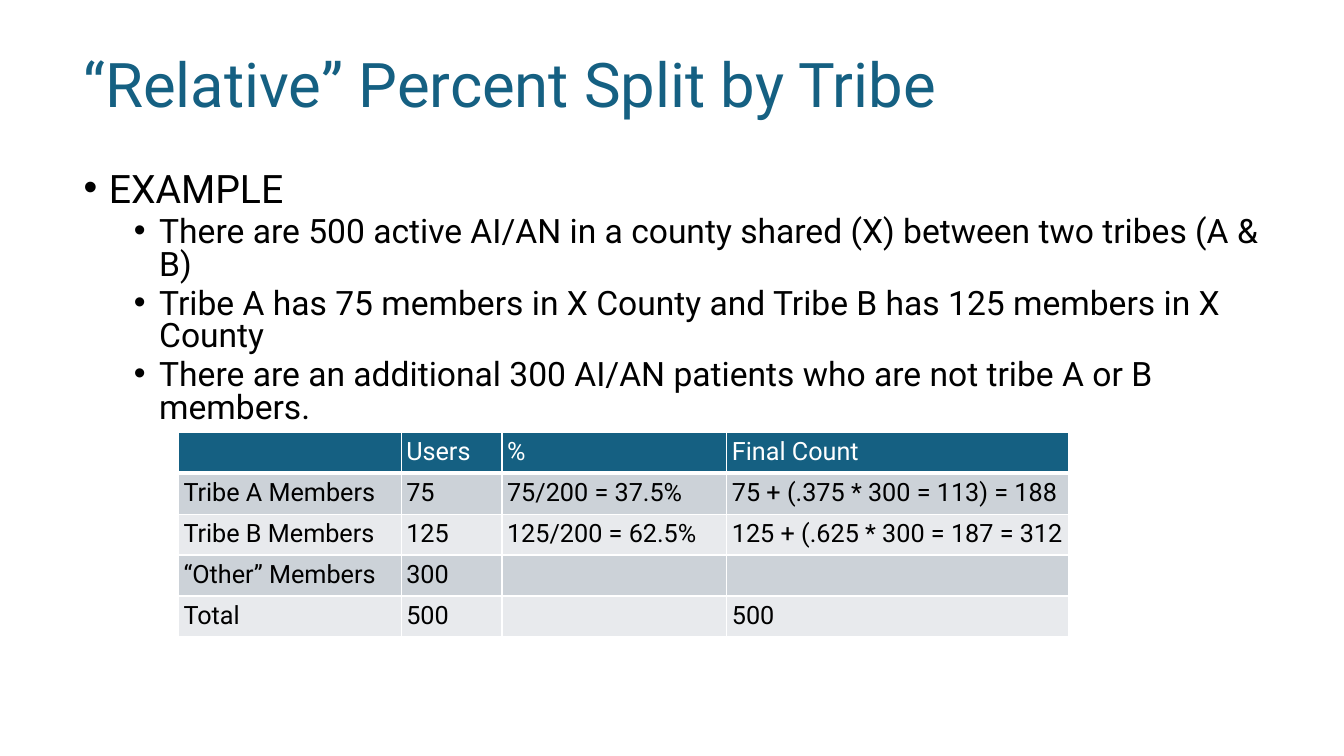
from lxml.etree import SubElement
from pptx import Presentation
from pptx.dml.color import RGBColor
from pptx.enum.text import MSO_ANCHOR as Anchor
from pptx.oxml.ns import qn
from pptx.util import Inches, Pt

TITLE = "“Relative” Percent Split by Tribe"
BULLETS = [
    (0, "EXAMPLE"),
    (1, "There are 500 active AI/AN in a county shared (X) between two tribes (A & B)"),
    (1, "Tribe A has 75 members in X County and Tribe B has 125 members in X County"),
    (1, "There are an additional 300 AI/AN patients who are not tribe A or B members."),
]
SPLIT = [
    ["", "Users", "%", "Final Count"],
    ["Tribe A Members", "75", "75/200 = 37.5%", "75 + (.375 * 300 = 113) = 188"],
    ["Tribe B Members", "125", "125/200 = 62.5%", "125 + (.625 * 300 = 187 = 312"],
    ["“Other” Members", "300", "", ""],
    ["Total", "500", "", "500"],
]


def rgb(value):
    return RGBColor.from_string(value)


class Deck:
    """Slide builder whose lengths are percentages of the slide's width and height."""

    font = "Roboto"
    ink, accent, white = "000000", "156082", "FFFFFF"
    bands = ["CCD2D8", "E8EAED"]
    levels = [(0.25, 28, 10), (0.75, 24, 5)]

    def __init__(self):
        self.prs = Presentation()
        self.prs.slide_width, self.prs.slide_height = Inches(13.33), Inches(7.5)
        self.slide = self.prs.slides.add_slide(self.prs.slide_layouts[6])

    def x(self, share):
        return int(self.prs.slide_width * share / 100)

    def y(self, share):
        return int(self.prs.slide_height * share / 100)

    def run(self, p, text, size, color):
        r = p.add_run()
        r.text = text
        r.font.name, r.font.size = self.font, Pt(size)
        r.font.color.rgb = rgb(color)

    def box(self, left, top, width, height):
        sp = self.slide.shapes.add_textbox(
            self.x(left), self.y(top), self.x(width), self.y(height))
        sp.text_frame.word_wrap = True
        return sp.text_frame

    def title(self, text, *place):
        tf = self.box(*place)
        tf.vertical_anchor = Anchor.MIDDLE
        p = tf.paragraphs[0]
        p.line_spacing = 0.9
        self.run(p, text, 44, self.accent)

    def bullets(self, items, *place):
        tf = self.box(*place)
        for i, (level, text) in enumerate(items):
            p = tf.add_paragraph() if i else tf.paragraphs[0]
            indent, size, before = self.levels[level]
            p.level = level
            p.line_spacing = 0.8
            p.space_before = Pt(before if i else 0)
            pPr = p._p.get_or_add_pPr()
            pPr.set("marL", str(Inches(indent)))
            pPr.set("indent", str(Inches(-0.25)))
            SubElement(pPr, qn("a:buFont"), typeface="Arial")
            SubElement(pPr, qn("a:buChar"), char="•")
            self.run(p, text, size, self.ink)

    def borders(self, cell, bottom):
        tcPr = cell._tc.get_or_add_tcPr()
        for side, width in zip("LRTB", (1, 1, 1, bottom)):
            ln = SubElement(tcPr, qn(f"a:ln{side}"), w=str(Pt(width)))
            fill = SubElement(ln, qn("a:solidFill"))
            SubElement(fill, qn("a:srgbClr"), val=self.white)

    def table(self, rows, left, top, widths, row_height):
        table = self.slide.shapes.add_table(
            len(rows), len(widths), self.x(left), self.y(top),
            self.x(sum(widths)), self.y(row_height * len(rows))).table
        table.first_row = table.horz_banding = False
        for column, width in zip(table.columns, widths):
            column.width = self.x(width)
        for i, values in enumerate(rows):
            table.rows[i].height = self.y(row_height)
            for j, text in enumerate(values):
                cell = table.cell(i, j)
                cell.margin_left = cell.margin_right = Inches(0.05)
                cell.margin_top = cell.margin_bottom = Inches(0.05)
                self.borders(cell, 1 if i else 3)
                cell.fill.solid()
                cell.fill.fore_color.rgb = rgb(self.bands[(i - 1) % 2] if i else self.accent)
                if text:
                    self.run(cell.text_frame.paragraphs[0], text, 18,
                             self.ink if i else self.white)


def main():
    deck = Deck()
    deck.title(TITLE, 5.48, 6.4, 79.2, 10.4)
    deck.bullets(BULLETS, 5.48, 22.27, 89.05, 28.93)
    deck.table(SPLIT, 13.28, 57.2, [16.58, 7.5, 16.73, 25.43], 5.41)
    deck.prs.save("out.pptx")


if __name__ == "__main__":
    main()
